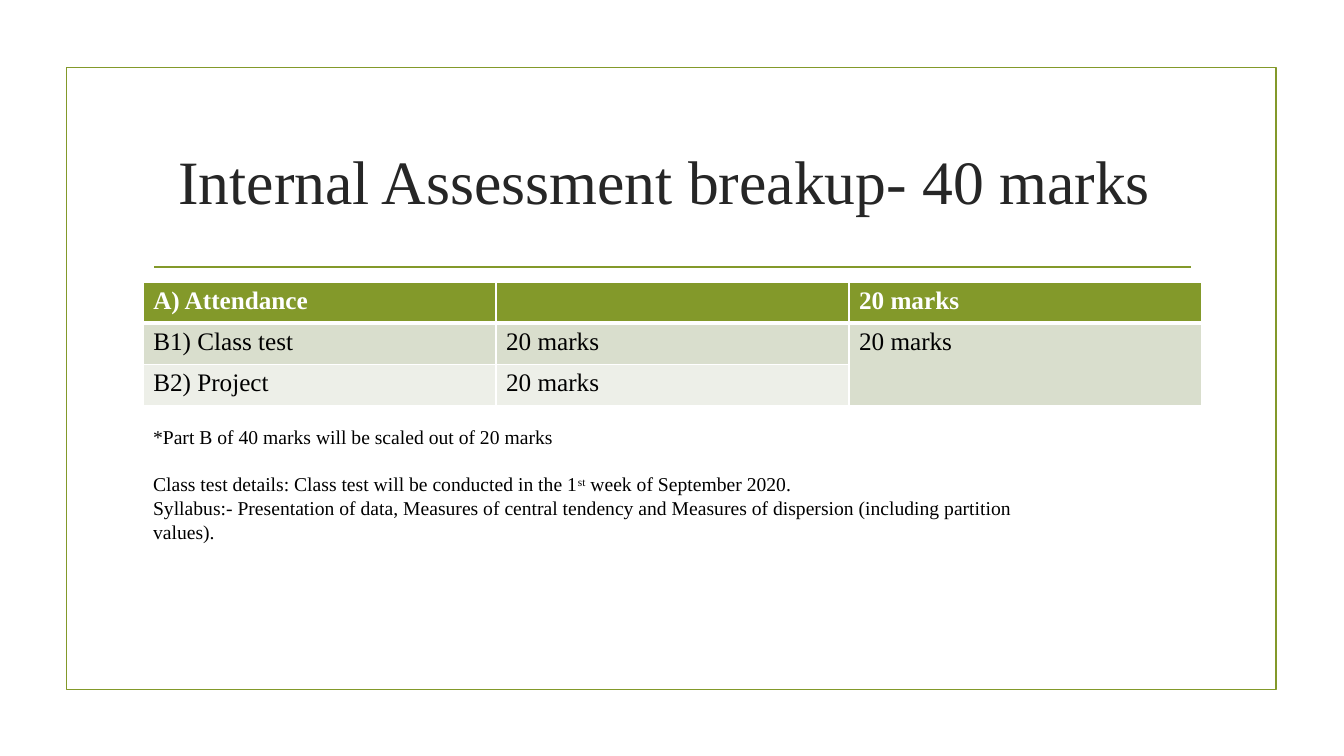
from lxml.etree import SubElement
from pptx import Presentation
from pptx.dml.color import RGBColor
from pptx.enum.shapes import MSO_CONNECTOR, MSO_SHAPE
from pptx.enum.text import MSO_ANCHOR, MSO_AUTO_SIZE, PP_ALIGN
from pptx.oxml import parse_xml
from pptx.oxml.ns import nsdecls, qn
from pptx.util import Inches, Pt

GREEN = RGBColor(0x83, 0x99, 0x2A)
SAGE = RGBColor(0xD9, 0xDE, 0xCD)
PALE = RGBColor(0xED, 0xEF, 0xE8)
WHITE = RGBColor(0xFF, 0xFF, 0xFF)
BLACK = RGBColor(0, 0, 0)
DARK = RGBColor(0x26, 0x26, 0x26)
FONT = "Times New Roman"

MARKS = [
    ["A) Attendance", "", "20 marks"],
    ["B1) Class test", "20 marks", "20 marks"],
    ["B2) Project", "20 marks", ""],
]
NOTES = [
    ["*Part B of 40 marks will be scaled out of 20 marks"],
    ["Class test details: Class test will be conducted in the 1", "st", " week of September 2020."],
    ["Syllabus:- Presentation of data, Measures of central tendency and "
     "Measures of dispersion (including partition values)."],
]


def style(font, size, color, bold=False):
    """Apply the slide's typeface with a size, colour and weight."""
    for key, value in {"name": FONT, "size": Pt(size), "bold": bold}.items():
        setattr(font, key, value)
    font.color.rgb = color


def add_frame(s, x, y, w, h):
    """Draw the outline and the rule below the title."""
    frame = s.shapes.add_shape(MSO_SHAPE.RECTANGLE, *map(Inches, (x, y, w, h)))
    frame.shadow.inherit = False
    frame.fill.background()
    rule_y = Inches(y + 1.98)
    rule = s.shapes.add_connector(
        MSO_CONNECTOR.STRAIGHT, Inches(x + 0.87), rule_y, Inches(x + w - 0.85), rule_y)
    SubElement(rule._element.spPr, qn("a:effectLst"))
    for shape in (frame, rule):
        shape.line.color.rgb = GREEN
        shape.line.width = Pt(1.25)


def add_title(s, x, y, w, h):
    """Place the centred heading in the title placeholder."""
    title = s.shapes.title
    for key, value in zip(("left", "top", "width", "height"), (x, y, w, h)):
        setattr(title, key, Inches(value))
    tf = title.text_frame
    tf.text = "Internal Assessment breakup- 40 marks "
    tf.auto_size = MSO_AUTO_SIZE.NONE
    tf.vertical_anchor = MSO_ANCHOR.MIDDLE
    p = tf.paragraphs[0]
    p.alignment = PP_ALIGN.CENTER
    style(p.font, 44, DARK)


def set_borders(cell, bottom):
    """Give a cell white borders, with its own bottom width in points."""
    tcPr = cell._tc.get_or_add_tcPr()
    widths = {"lnL": 1, "lnR": 1, "lnT": 1, "lnB": bottom}
    for i, (side, width) in enumerate(widths.items()):
        tcPr.insert(i, parse_xml(
            f'<a:{side} {nsdecls("a")} w="{Pt(width)}"><a:solidFill>'
            f'<a:srgbClr val="{WHITE}"/></a:solidFill></a:{side}>'))


def add_marks_table(s, x, y, w, h):
    """Build the marks table with the scaled mark spanning both part B rows."""
    table = s.shapes.add_table(3, 3, *map(Inches, (x, y, w, h))).table
    for i, (texts, fill) in enumerate(zip(MARKS, (GREEN, SAGE, PALE))):
        header = i == 0
        for j, text in enumerate(texts):
            cell = table.cell(i, j)
            cell.text = text
            cell.fill.solid()
            cell.fill.fore_color.rgb = fill
            set_borders(cell, 3 if header else 1)
            style(cell.text_frame.paragraphs[0].font, 18, WHITE if header else BLACK, header)
    table.cell(1, 2).merge(table.cell(2, 2))


def add_notes(s, x, y, w, h):
    """Write the remarks below the table."""
    tf = s.shapes.add_textbox(*map(Inches, (x, y, w, h))).text_frame
    tf.word_wrap = True
    for i, parts in enumerate(NOTES):
        p = tf.add_paragraph() if i else tf.paragraphs[0]
        p.line_spacing = Pt(16.8)
        if i == 1:
            p.space_before = Pt(16.8)
        for text in parts:
            r = p.add_run()
            r.text = text
            style(r.font, 14, BLACK)
            if text == "st":
                r.font._element.set("baseline", "30000")


def main():
    """Build and save the slide."""
    prs = Presentation()
    prs.slide_width, prs.slide_height = Inches(13.33), Inches(7.5)
    s = prs.slides.add_slide(prs.slide_layouts[5])
    add_frame(s, 0.66, 0.67, 12, 6.17)
    add_title(s, 1.42, 1.07, 10.5, 1.43)
    add_marks_table(s, 1.42, 2.8, 10.5, 1.22)
    add_notes(s, 1.42, 4.17, 9.16, 1.51)
    prs.save("out.pptx")


if __name__ == "__main__":
    main()
